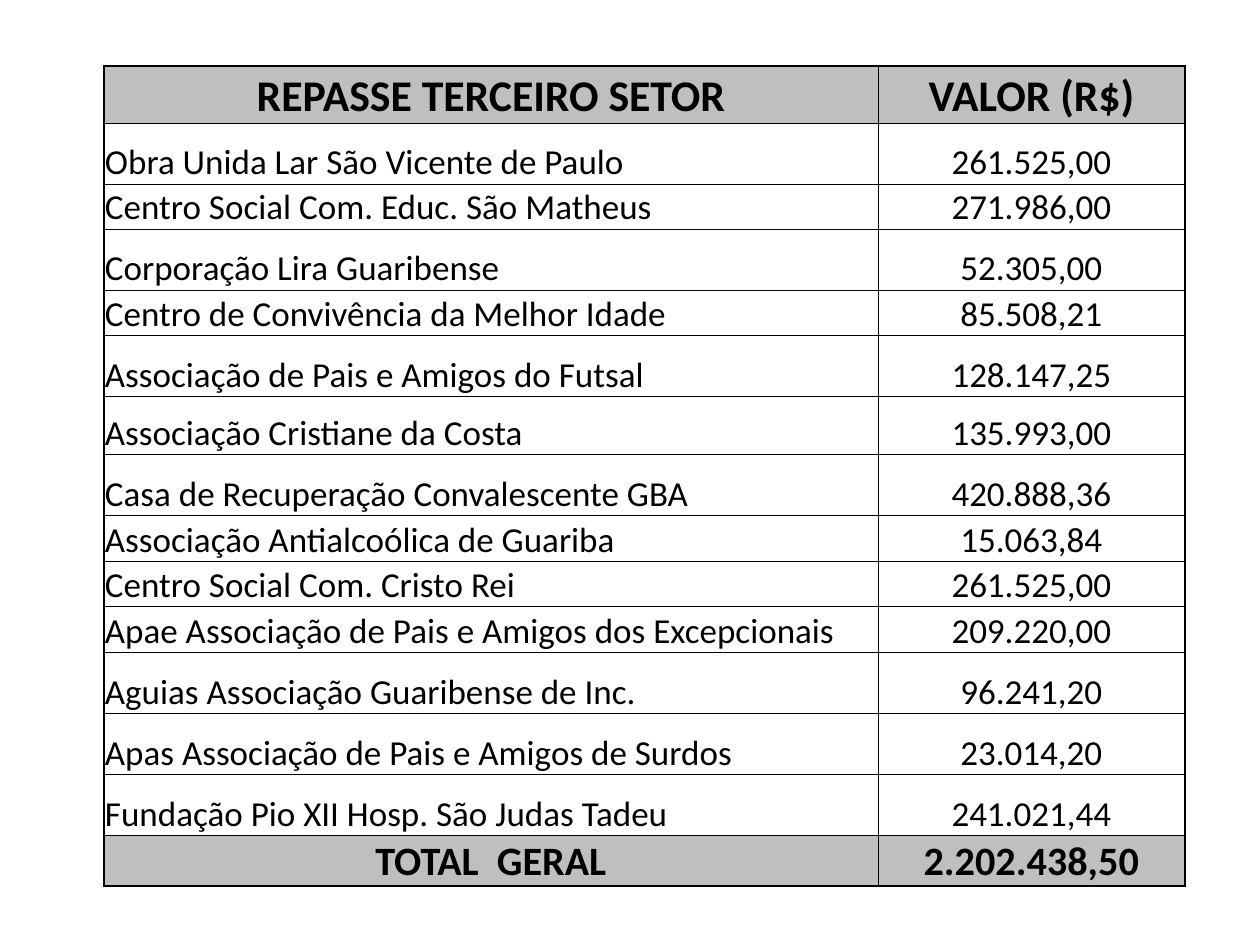
from dataclasses import dataclass

import lxml.etree
import pptx
import pptx.dml.color
import pptx.enum.text
import pptx.oxml.ns
import pptx.table
import pptx.util

PX = 914400 // 126  # EMU per px
BLACK = pptx.dml.color.RGBColor(0x00, 0x00, 0x00)
GRAY = pptx.dml.color.RGBColor(0xBF, 0xBF, 0xBF)
FONT = "Calibri"
LEFT, TOP = 104, 66
COL_WIDTHS = (774, 307)
OUTER, INNER = 1, 0.5  # border widths in points
ALIGN = pptx.enum.text.PP_ALIGN


@dataclass(frozen=True)
class Row:
    name: str
    value: str
    height: int
    size: int = 20
    band: bool = False  # gray, bold and centred


ROWS = (
    Row("REPASSE TERCEIRO SETOR", "VALOR (R$)", 57, 25, True),
    Row("Obra Unida Lar São Vicente de Paulo", "261.525,00", 61),
    Row("Centro Social Com. Educ. São Matheus", "271.986,00", 45),
    Row("Corporação Lira Guaribense", "52.305,00", 61),
    Row("Centro de Convivência da Melhor Idade", "85.508,21", 46),
    Row("Associação de Pais e Amigos do Futsal", "128.147,25", 61),
    Row("Associação Cristiane da Costa", "135.993,00", 58),
    Row("Casa de Recuperação Convalescente GBA", "420.888,36", 61),
    Row("Associação Antialcoólica de Guariba", "15.063,84", 46),
    Row("Centro Social Com. Cristo Rei", "261.525,00", 45),
    Row("Apae Associação de Pais e Amigos dos Excepcionais", "209.220,00", 46),
    Row("Aguias Associação Guaribense de Inc.", "96.241,20", 61),
    Row("Apas Associação de Pais e Amigos de Surdos", "23.014,20", 61),
    Row("Fundação Pio XII Hosp. São Judas Tadeu", "241.021,44", 61),
    Row("TOTAL  GERAL", "2.202.438,50", 50, 23, True),
)


def px(n: int) -> pptx.util.Emu:
    return pptx.util.Emu(n * PX)


def set_borders(cell: pptx.table._Cell, widths: dict[str, float]) -> None:
    """Borders must precede the fill inside the cell properties."""
    qn = pptx.oxml.ns.qn
    tc_pr = cell._tc.get_or_add_tcPr()
    for i, (side, width) in enumerate(widths.items()):
        ln = lxml.etree.Element(qn(f"a:ln{side}"), w=str(pptx.util.Pt(width)))
        fill = lxml.etree.SubElement(ln, qn("a:solidFill"))
        lxml.etree.SubElement(fill, qn("a:srgbClr"), val=str(BLACK))
        tc_pr.insert(i, ln)


def fill_cell(cell: pptx.table._Cell, text: str, row: Row, centred: bool) -> None:
    cell.margin_left = cell.margin_right = cell.margin_top = px(1)
    cell.margin_bottom = 0
    cell.vertical_anchor = pptx.enum.text.MSO_ANCHOR.BOTTOM
    if row.band:
        cell.fill.solid()
        cell.fill.fore_color.rgb = GRAY
    else:
        cell.fill.background()
    p = cell.text_frame.paragraphs[0]
    p.alignment = ALIGN.CENTER if centred else ALIGN.LEFT
    r = p.add_run()
    r.text = text
    r.font.name = FONT
    r.font.size = pptx.util.Pt(row.size)
    r.font.bold = row.band
    r.font.color.rgb = BLACK


def main() -> None:
    prs = pptx.Presentation()
    prs.slide_width, prs.slide_height = px(1260), px(945)
    s = prs.slides.add_slide(prs.slide_layouts[6])

    # Table frame without banding
    height = sum(row.height for row in ROWS)
    sp = s.shapes.add_table(len(ROWS), len(COL_WIDTHS), px(LEFT), px(TOP),
                            px(sum(COL_WIDTHS)), px(height))
    table = sp.table
    table.first_row = table.horz_banding = False
    for column, width in zip(table.columns, COL_WIDTHS):
        column.width = px(width)

    # Rows, with a heavier line around the outside
    last_row, last_col = len(ROWS) - 1, len(COL_WIDTHS) - 1
    for i, row in enumerate(ROWS):
        table.rows[i].height = px(row.height)
        for j, text in enumerate((row.name, row.value)):
            cell = table.cell(i, j)
            fill_cell(cell, text, row, centred=row.band or j == last_col)
            edges = {"L": j == 0, "R": j == last_col,
                     "T": i == 0, "B": i == last_row}
            set_borders(cell, {side: OUTER if outside else INNER
                               for side, outside in edges.items()})

    prs.save("out.pptx")


if __name__ == "__main__":
    main()
